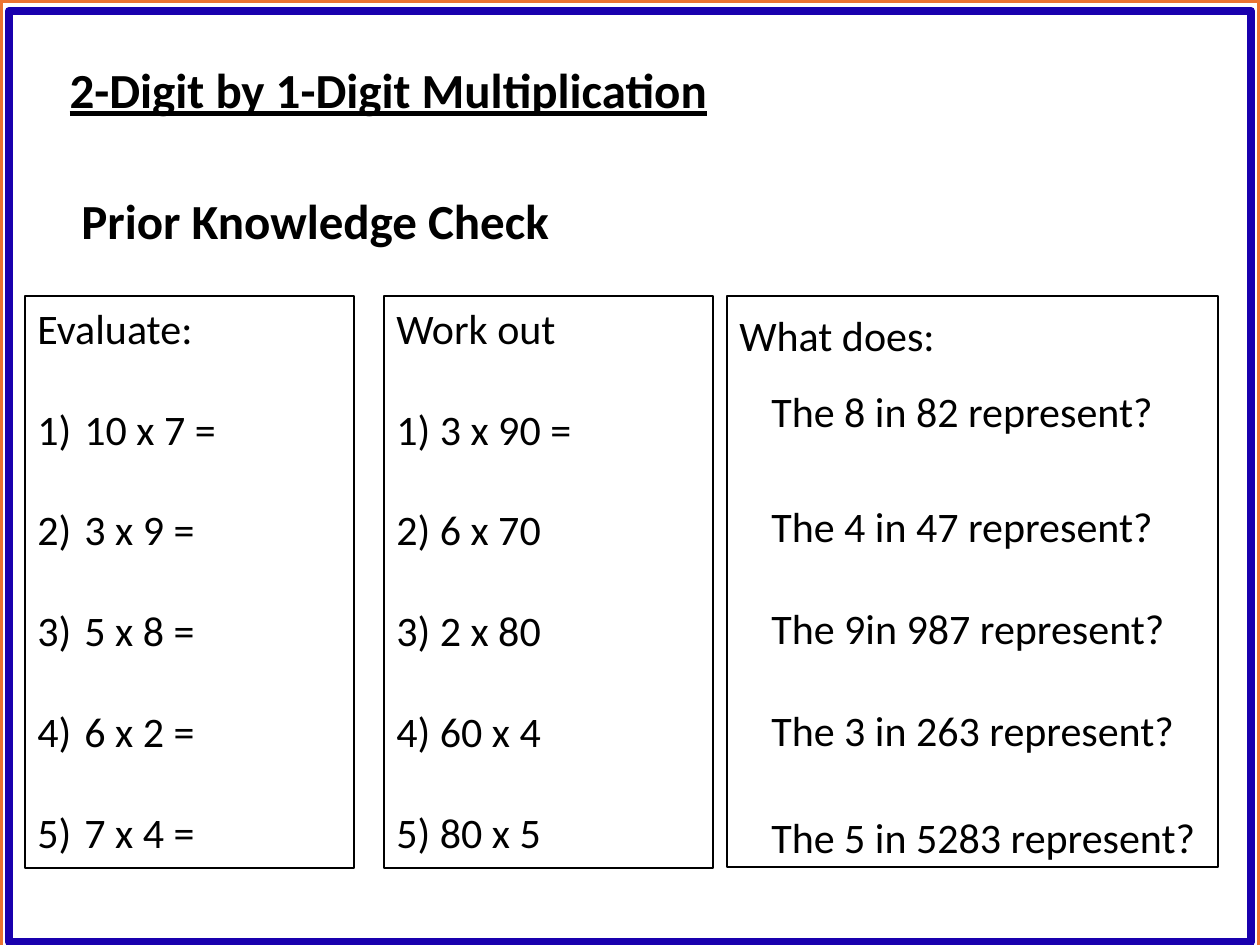
from dataclasses import dataclass

from lxml import etree
from pptx import Presentation
from pptx.dml.color import RGBColor
from pptx.enum.shapes import MSO_SHAPE
from pptx.enum.text import MSO_ANCHOR, MSO_AUTO_SIZE, PP_ALIGN
from pptx.oxml.ns import qn
from pptx.util import Emu, Pt

RECTANGLE = MSO_SHAPE.RECTANGLE
TOP = MSO_ANCHOR.TOP
NO_FIT = MSO_AUTO_SIZE.NONE
LEFT = PP_ALIGN.LEFT

BLACK = RGBColor(0x00, 0x00, 0x00)
ORANGE = RGBColor(0xEB, 0x73, 0x31)
BLUE = RGBColor(0x19, 0x00, 0xAE)

FONT = "Calibri"
EMU_PER_PX = 914400 / 126


@dataclass(frozen=True)
class Box:
    left: int
    top: int
    width: int
    height: int


@dataclass(frozen=True)
class Question:
    text: str
    space_before: float = 28.8


@dataclass(frozen=True)
class Panel:
    box: Box
    heading: str
    questions: tuple[Question, ...]
    indent: int = 0
    numbered: bool = False
    line_spacing: float = 1.0
    heading_after: int = 0


FRAMES = (
    (Box(0, 0, 1260, 954), ORANGE, 3),
    (Box(9, 11, 1242, 931), BLUE, 4.5),
)

PANELS = (
    Panel(
        Box(25, 296, 329, 572),
        "Evaluate:",
        tuple(Question(t) for t in ("10 x 7 =", "3 x 9 =", "5 x 8 =", "6 x 2 =", "7 x 4 =")),
        indent=47,
        numbered=True,
    ),
    Panel(
        Box(384, 296, 329, 572),
        "Work out",
        tuple(
            Question(t)
            for t in ("1) 3 x 90 =", "2) 6 x 70", "3) 2 x 80", "4) 60 x 4", "5) 80 x 5")
        ),
    ),
    Panel(
        Box(727, 296, 491, 571),
        "What does:",
        (
            Question("The 8 in 82 represent?", 0),
            Question("The 4 in 47 represent?", 33),
            Question("The 9in 987 represent?", 25),
            Question("The 3 in 263 represent?", 25),
            Question("The 5 in 5283 represent?", 28),
        ),
        indent=32,
        line_spacing=1.15,
        heading_after=10,
    ),
)


def px(value: int) -> Emu:
    return Emu(round(value * EMU_PER_PX))


def place(sp, box: Box) -> None:
    sp.left, sp.top = px(box.left), px(box.top)
    sp.width, sp.height = px(box.width), px(box.height)


def format_text(p, size: int, bold: bool = False, underline: bool = False) -> None:
    p.alignment = LEFT
    for r in p.runs:
        r.font.name = FONT
        r.font.size = Pt(size)
        r.font.bold = bold
        r.font.underline = underline
        r.font.color.rgb = BLACK


def set_heading(sp, box: Box, text: str, underline: bool = False) -> None:
    place(sp, box)
    tf = sp.text_frame
    tf.text = text
    tf.word_wrap = True
    tf.auto_size = NO_FIT
    tf.vertical_anchor = TOP
    format_text(tf.paragraphs[0], 28, bold=True, underline=underline)


def add_outline(slide, box: Box, color: RGBColor, weight: float):
    sp = slide.shapes.add_shape(RECTANGLE, 0, 0, 0, 0)
    place(sp, box)
    sp.shadow.inherit = False
    sp.fill.background()
    sp.line.color.rgb = color
    sp.line.width = Pt(weight)
    return sp


def set_indent(p, indent: int, numbered: bool) -> None:
    pPr = p._p.get_or_add_pPr()
    pPr.set("marL", str(px(indent)))
    if numbered:
        pPr.set("indent", str(-px(indent)))
        etree.SubElement(pPr, qn("a:buAutoNum"), type="arabicParenR")


def add_panel(slide, panel: Panel) -> None:
    tf = add_outline(slide, panel.box, BLACK, 0.75).text_frame
    tf.word_wrap = True
    tf.auto_size = NO_FIT
    tf.vertical_anchor = TOP
    p = tf.paragraphs[0]
    p.text = panel.heading
    p.line_spacing = panel.line_spacing
    p.space_after = Pt(panel.heading_after)
    format_text(p, 24)
    for question in panel.questions:
        p = tf.add_paragraph()
        p.text = question.text
        set_indent(p, panel.indent, panel.numbered)
        p.line_spacing = panel.line_spacing
        p.space_before = Pt(question.space_before)
        format_text(p, 24)


def main() -> None:
    prs = Presentation()
    prs.slide_width, prs.slide_height = px(1260), px(945)
    slide = prs.slides.add_slide(prs.slide_layouts[5])
    for box, color, weight in FRAMES:
        add_outline(slide, box, color, weight)
    set_heading(
        slide.shapes.title,
        Box(57, 53, 868, 72),
        "2-Digit by 1-Digit Multiplication",
        underline=True,
    )
    subtitle = slide.shapes.add_textbox(0, 0, 0, 0)
    set_heading(subtitle, Box(69, 184, 495, 72), "Prior Knowledge Check")
    for panel in PANELS:
        add_panel(slide, panel)
    prs.save("out.pptx")


if __name__ == "__main__":
    main()
